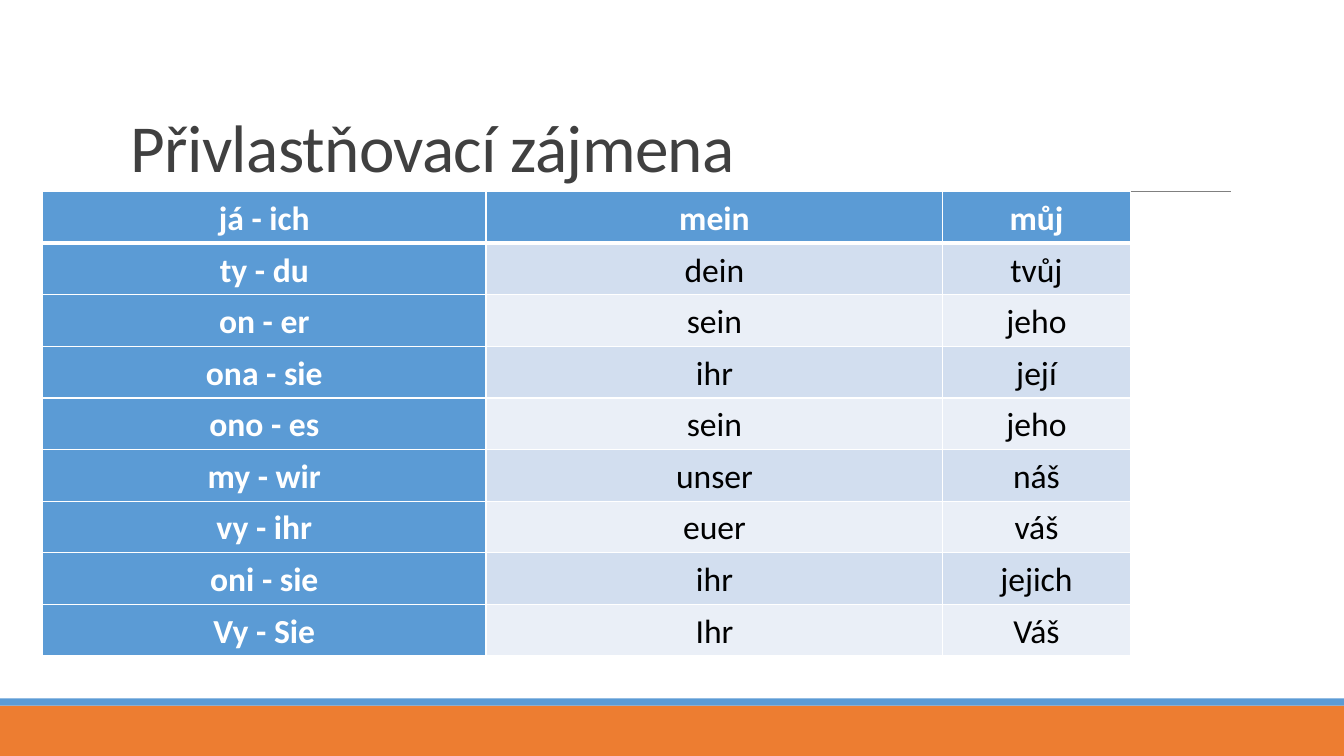
from lxml.etree import SubElement
from pptx import Presentation
from pptx.dml.color import RGBColor
from pptx.enum.shapes import MSO_CONNECTOR as Connector, MSO_SHAPE as Preset
from pptx.enum.text import MSO_ANCHOR as Anchor, PP_ALIGN as Align
from pptx.oxml.ns import qn
from pptx.util import Cm, Pt

WHITE = RGBColor(0xFF, 0xFF, 0xFF)
BLACK = RGBColor(0x00, 0x00, 0x00)
ORANGE = RGBColor(0xED, 0x7D, 0x31)
BLUE = RGBColor(0x5B, 0x9B, 0xD5)
GRAY = RGBColor(0x80, 0x80, 0x80)
DARK_GRAY = RGBColor(0x40, 0x40, 0x40)
BANDS = [RGBColor(0xEA, 0xEF, 0xF7), RGBColor(0xD2, 0xDE, 0xEF)]

SLIDE_WIDTH, SLIDE_HEIGHT = 33.87, 19.05
ROW_HEIGHT = 1.3
COLUMN_WIDTHS = [11.18, 11.51, 4.72]
PRONOUNS = [
    ("já - ich", "mein", "můj"),
    ("ty - du", "dein", "tvůj"),
    ("on - er", "sein", "jeho"),
    ("ona - sie", "ihr", "její"),
    ("ono - es", "sein", "jeho"),
    ("my - wir", "unser", "náš"),
    ("vy - ihr", "euer", "váš"),
    ("oni - sie", "ihr", "jejich"),
    ("Vy - Sie", "Ihr", "Váš"),
]


def write(frame, text, size, color, bold=False, align=Align.LEFT,
          line_spacing=1.0, space_after=0, tracking=None):
    paragraph = frame.paragraphs[0]
    paragraph.alignment = align
    paragraph.line_spacing = line_spacing
    paragraph.space_after = Pt(space_after)
    run = paragraph.add_run()
    run.text = text
    run.font.name = "Calibri"
    run.font.size = Pt(size)
    run.font.bold = bold
    run.font.color.rgb = color
    if tracking is not None:
        run.font._element.set("spc", str(round(tracking * 100)))


def add_band(slide, top, height, color):
    band = slide.shapes.add_shape(
        Preset.RECTANGLE, 0, Cm(top), Cm(SLIDE_WIDTH), Cm(height))
    band.shadow.inherit = False
    band.fill.solid()
    band.fill.fore_color.rgb = color
    band.line.fill.background()


def add_rule(slide, left, right, y):
    rule = slide.shapes.add_connector(
        Connector.STRAIGHT, Cm(left), Cm(y), Cm(right), Cm(y))
    rule.line.color.rgb = GRAY
    rule.line.width = Pt(0.5)
    SubElement(rule._element.spPr, qn("a:effectLst"))


def add_title(slide, text):
    title = slide.shapes.add_textbox(Cm(3.05), Cm(0.79), Cm(27.94), Cm(4.04))
    title.text_frame.word_wrap = True
    title.text_frame.vertical_anchor = Anchor.BOTTOM
    write(title.text_frame, text, 48, DARK_GRAY, line_spacing=0.85, tracking=-0.5)


def set_borders(cell, top=1, bottom=1):
    properties = cell._tc.get_or_add_tcPr()
    for side, width in (("L", 1), ("R", 1), ("T", top), ("B", bottom)):
        border = SubElement(properties, qn(f"a:ln{side}"), w=str(Pt(width)))
        fill = SubElement(border, qn("a:solidFill"))
        SubElement(fill, qn("a:srgbClr"), val=str(WHITE))


def add_pronoun_table(slide, left, top):
    table = slide.shapes.add_table(
        len(PRONOUNS), len(COLUMN_WIDTHS), Cm(left), Cm(top),
        Cm(sum(COLUMN_WIDTHS)), Cm(ROW_HEIGHT * len(PRONOUNS))).table
    table.first_col = True
    for column, width in zip(table.columns, COLUMN_WIDTHS):
        column.width = Cm(width)
    for r, words in enumerate(PRONOUNS):
        table.rows[r].height = Cm(ROW_HEIGHT)
        for c, word in enumerate(words):
            cell = table.cell(r, c)
            heading = r == 0 or c == 0
            # The heavier rule lies between the first two rows
            set_borders(cell, top=3 if r == 1 else 1, bottom=3 if r == 0 else 1)
            cell.fill.solid()
            cell.fill.fore_color.rgb = BLUE if heading else BANDS[r % 2]
            cell.vertical_anchor = Anchor.MIDDLE
            cell.margin_left = cell.margin_right = Cm(0.25)
            cell.margin_top = cell.margin_bottom = Cm(0.1)
            write(cell.text_frame, word, 24, WHITE if heading else BLACK,
                  bold=heading, align=Align.CENTER,
                  line_spacing=1.07, space_after=11.2)


def main():
    deck = Presentation()
    deck.slide_width, deck.slide_height = Cm(SLIDE_WIDTH), Cm(SLIDE_HEIGHT)
    slide = deck.slides.add_slide(deck.slide_layouts[6])

    # Footer bands and title rule
    add_band(slide, 17.78, 1.27, ORANGE)
    add_band(slide, 17.6, 0.18, BLUE)
    add_rule(slide, 3.33, 31.01, 4.83)

    # Title and table
    add_title(slide, "Přivlastňovací zájmena")
    add_pronoun_table(slide, 1.07, 4.83)

    deck.save("out.pptx")


if __name__ == "__main__":
    main()
